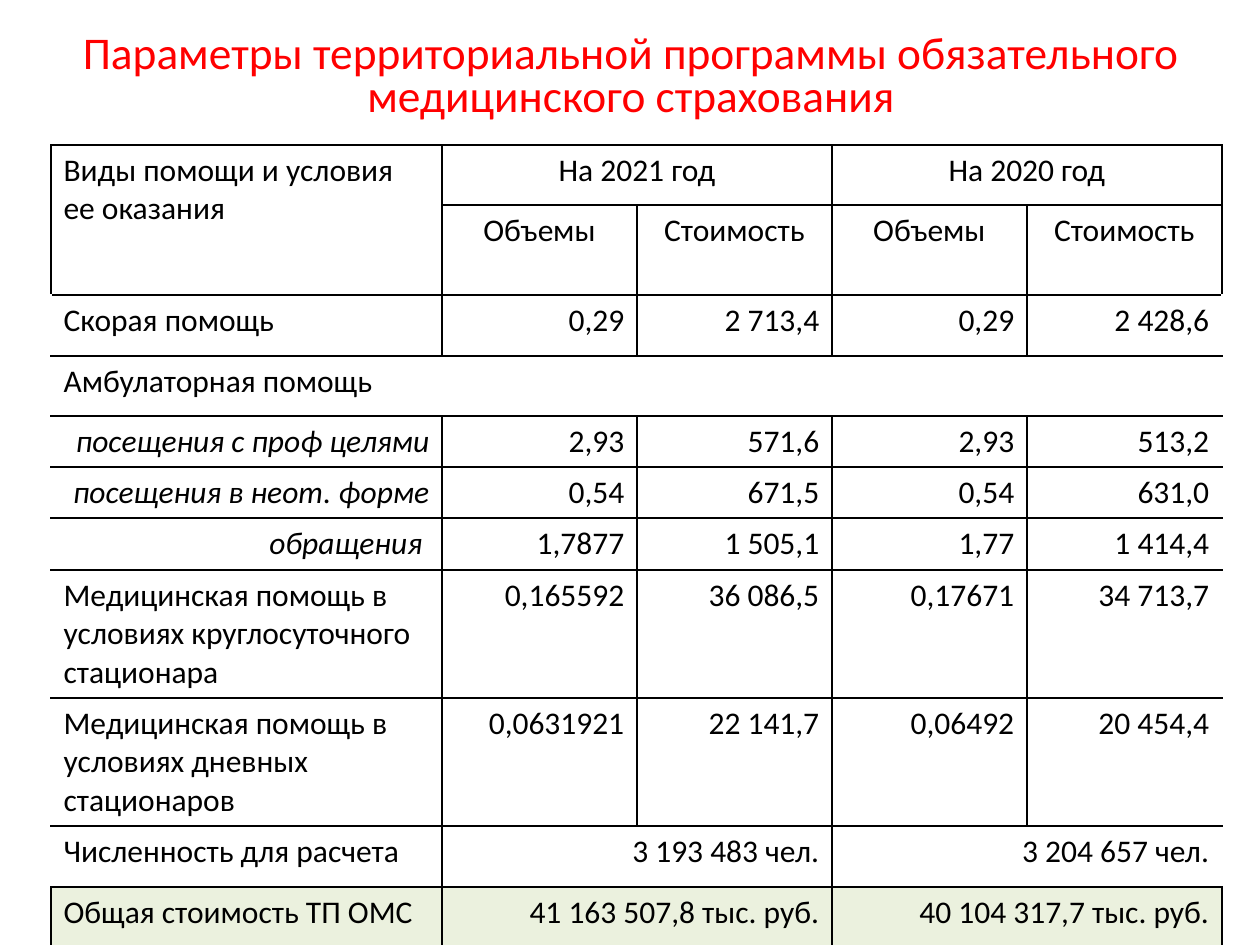
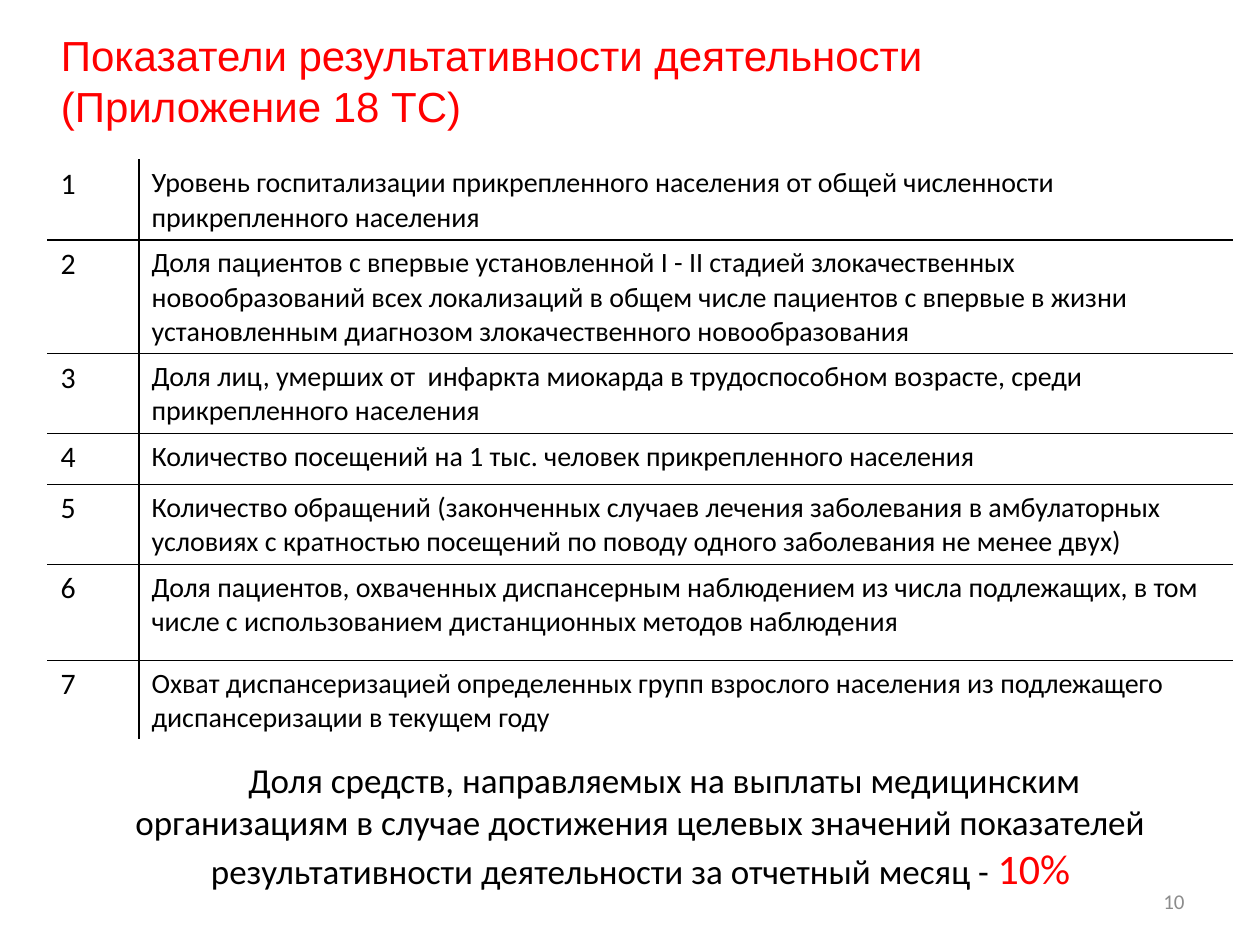
import pptx
import pptx.dml.color
import pptx.enum.text
import pptx.oxml
import pptx.oxml.ns
import pptx.util

PX = 914400 / 126
FONT = "Calibri"
BLACK, WHITE, RED, GREY, GREEN = "000000", "FFFFFF", "FF0000", "8C8C8C", "EBF1DE"
ALIGN = pptx.enum.text.PP_ALIGN
ANCHOR = pptx.enum.text.MSO_ANCHOR
rgb = pptx.dml.color.RGBColor.from_string


def add_text(page, frame, lines, size, color, align, font=FONT, anchor=ANCHOR.MIDDLE):
    box = page.shapes.add_textbox(*[int(length * PX) for length in frame])
    box.text_frame.word_wrap = True
    box.text_frame.vertical_anchor = anchor
    box.text_frame.text = "\n".join(lines)
    for para in box.text_frame.paragraphs:
        para.alignment = align
        para.font.size = pptx.util.Pt(size)
        para.font.name = font
        para.font.color.rgb = rgb(color)
    return box.text_frame


def add_ruled_table(page, left, top, widths, heights, texts, sizes, merges, open_edge):
    """open_edge(row, column, side) tells which cell sides get a white line."""
    frame = [int(length * PX) for length in (left, top, sum(widths), sum(heights))]
    table = page.shapes.add_table(len(heights), len(widths), *frame).table
    table.first_row = table.horz_banding = False
    for column, width in zip(table.columns, widths):
        column.width = int(width * PX)
    for row, height in zip(table.rows, heights):
        row.height = int(height * PX)
    for first_row, first_column, last_row, last_column in merges:
        table.cell(first_row, first_column).merge(table.cell(last_row, last_column))
    for r, row_texts in enumerate(texts):
        for c, text in enumerate(row_texts):
            cell = table.cell(r, c)
            cell.fill.background()
            para = cell.text_frame.paragraphs[0]
            para.text = text
            para.font.size = pptx.util.Pt(sizes[c])
            para.font.name = FONT
            para.font.color.rgb = rgb(BLACK)
            last_column = c + cell.span_width - 1 if cell.is_merge_origin else c
            properties = cell._tc.get_or_add_tcPr()
            for position, side in enumerate("LRTB"):
                edge_column = last_column if side == "R" else c
                color = WHITE if open_edge(r, edge_column, side) else BLACK
                properties.insert(position, pptx.oxml.parse_xml(
                    f'<a:ln{side} {pptx.oxml.ns.nsdecls("a")} w="12700"><a:solidFill>'
                    f'<a:srgbClr val="{color}"/></a:solidFill></a:ln{side}>'))
    return table


deck = pptx.Presentation()
deck.slide_width, deck.slide_height = int(1260 * PX), int(945 * PX)
blank = deck.slide_layouts[6]

# Slide 1: programme parameters
page = deck.slides.add_slide(blank)
title = add_text(page, (64, 24, 1134, 108),
                 ["Параметры территориальной программы обязательного медицинского страхования"],
                 25.9, RED, ALIGN.CENTER)
title.paragraphs[0].line_spacing = 0.8

parameters = [
    ["Виды помощи и условия ее оказания", "На 2021 год", "", "На 2020 год", ""],
    ["", "Объемы", "Стоимость", "Объемы", "Стоимость"],
    ["Скорая помощь", "0,29", "2 713,4", "0,29", "2 428,6"],
    ["Амбулаторная помощь", "", "", "", ""],
    ["посещения с проф целями", "2,93", "571,6", "2,93", "513,2"],
    ["посещения в неот. форме", "0,54", "671,5", "0,54", "631,0"],
    ["обращения ", "1,7877", "1 505,1", "1,77", "1 414,4"],
    ["Медицинская помощь в условиях круглосуточного стационара",
     "0,165592", "36 086,5", "0,17671", "34 713,7"],
    ["Медицинская помощь в условиях дневных стационаров",
     "0,0631921", "22 141,7", "0,06492", "20 454,4"],
    ["Численность для расчета", "3 193 483 чел.", "", "3 204 657 чел.", ""],
    ["Общая стоимость ТП ОМС", "41 163 507,8 тыс. руб.", "", "40 104 317,7 тыс. руб.", ""],
]
header_rows, visit_rows, total_row = (0, 1), (4, 5, 6), 10
year_merges = [(r, c, r, c + 1) for r in (0, 9, total_row) for c in (1, 3)]
table = add_ruled_table(
    page, 51, 145, [391, 195, 195, 195, 195],
    [60, 90, 61, 60, 51, 51, 52, 128, 128, 61, 60], parameters, [18] * 5,
    [(0, 0, 1, 0), (3, 0, 3, 4)] + year_merges,
    lambda r, c, side: 2 <= r < total_row and (c, side) in ((0, "L"), (4, "R")))

for r in range(len(parameters)):
    for c in range(5):
        cell = table.cell(r, c)
        para = cell.text_frame.paragraphs[0]
        if c > 0:
            para.alignment = ALIGN.CENTER if r in header_rows else ALIGN.RIGHT
        elif r in visit_rows:
            para.alignment = ALIGN.RIGHT
            para.font.italic = True
        if r == total_row:
            cell.fill.solid()
            cell.fill.fore_color.rgb = rgb(GREEN)

# Slide 2: performance indicators
page = deck.slides.add_slide(blank)
add_text(page, (903, 876, 294, 50), ["10"], 12, GREY, ALIGN.RIGHT)
title = add_text(page, (0, 23, 944, 165),
                 ["Показатели результативности деятельности", "(Приложение 18 ТС)"],
                 24, RED, ALIGN.LEFT, "Arial", ANCHOR.TOP)
title.margin_left = int(61 * PX)
for para in title.paragraphs:
    para.line_spacing = pptx.util.Pt(29)

# Closing statement with the highlighted share
note = add_text(page, (81, 759, 1119, 186),
                ["Доля средств, направляемых на выплаты медицинским организациям в случае "
                 "достижения целевых значений показателей результативности деятельности "
                 "за отчетный месяц - "], 20, BLACK, ALIGN.CENTER, anchor=ANCHOR.TOP)
note.margin_top = 0
para = note.paragraphs[0]
para._p.get_or_add_pPr().set("indent", str(int(48 * PX)))
span = para.add_run()
span.text = "10%"
span.font.size = pptx.util.Pt(24)
span.font.color.rgb = rgb(RED)

indicators = [
    "Уровень госпитализации прикрепленного населения от общей численности "
    "прикрепленного населения",
    "Доля пациентов с впервые установленной I - II стадией злокачественных "
    "новообразований всех локализаций в общем числе пациентов с впервые в жизни "
    "установленным диагнозом злокачественного новообразования",
    "Доля лиц, умерших от  инфаркта миокарда в трудоспособном возрасте, среди "
    "прикрепленного населения",
    "Количество посещений на 1 тыс. человек прикрепленного населения",
    "Количество обращений (законченных случаев лечения заболевания в амбулаторных "
    "условиях с кратностью посещений по поводу одного заболевания не менее двух)",
    "Доля пациентов, охваченных диспансерным наблюдением из числа подлежащих, в том "
    "числе с использованием дистанционных методов наблюдения",
    "Охват диспансеризацией определенных групп взрослого населения из подлежащего "
    "диспансеризации в текущем году",
]
outer_edges = ((0, "T"), (len(indicators) - 1, "B"))
add_ruled_table(
    page, 48, 160, [91, 1093], [80, 113, 80, 51, 80, 96, 79],
    [[str(number), text] for number, text in enumerate(indicators, 1)], [17, 16], [],
    lambda r, c, side: (c, side) in ((0, "L"), (1, "R")) or (r, side) in outer_edges)

deck.save("out.pptx")
